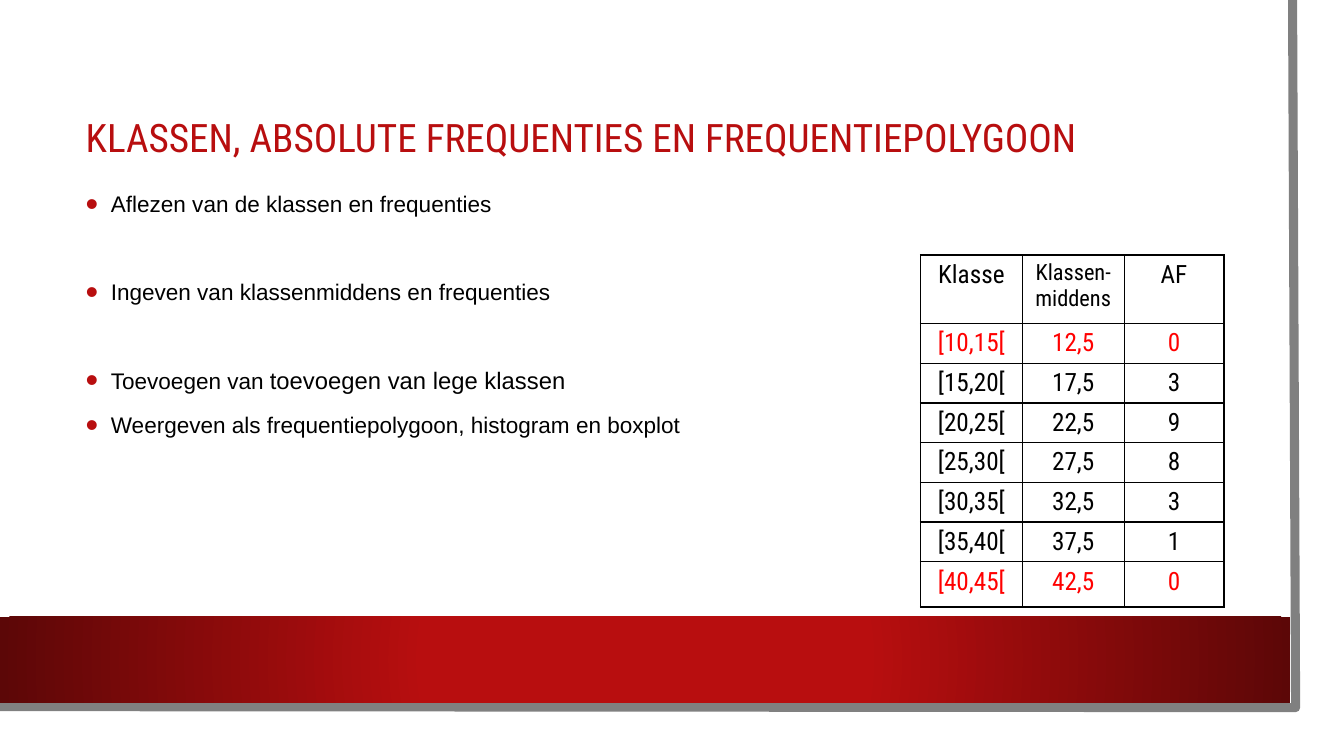
from lxml.etree import SubElement as add_element
from pptx import Presentation
from pptx.dml.color import RGBColor
from pptx.enum.shapes import MSO_SHAPE as Shape
from pptx.enum.text import MSO_ANCHOR as Anchor, PP_ALIGN as Align
from pptx.oxml import parse_xml
from pptx.oxml.ns import nsdecls, qn
from pptx.util import Inches, Pt

COLORS = {"red": "B80E0F", "dark": "5C0707", "gray": "808080",
          "black": "000000", "accent": "FF0000"}
HEADING_FONT, BODY_FONT = "Roboto Condensed", "Arial"

# Each bullet: space before in points, then its (text, size) spans
BULLETS = [
    (0, [("Aflezen van de klassen en frequenties", 16.1)]),
    (41.5, [("Ingeven van klassenmiddens en frequenties", 16.1)]),
    (41.5, [("Toevoegen van ", 16.1), ("toevoegen van lege klassen", 17)]),
    (10, [("Weergeven als frequentiepolygoon, histogram en boxplot", 16.1)]),
]
HEADERS = [("Klasse", 18), ("Klassen-\nmiddens", 16), ("AF", 18)]
FREQUENCIES = [0, 3, 9, 8, 3, 1, 0]
FIRST_CLASS, CLASS_WIDTH = 10, 5


def rgb(name):
    return RGBColor.from_string(COLORS[name])


class SlideBuilder:
    def __init__(self, deck):
        self.page = deck.slides.add_slide(deck.slide_layouts[1])

    def place(self, box, left, top, width, height):
        for name, value in dict(left=left, top=top, width=width, height=height).items():
            setattr(box, name, Inches(value))

    def style_font(self, font, size, color, name):
        for key, value in dict(size=Pt(size), name=name, bold=False).items():
            setattr(font, key, value)
        font.color.rgb = rgb(color)

    def title(self, text, bounds):
        box = self.page.shapes.title
        self.place(box, *bounds)
        box.text_frame.text = text
        box.text_frame.vertical_anchor = Anchor.MIDDLE
        para = box.text_frame.paragraphs[0]
        for name, value in dict(alignment=Align.LEFT, line_spacing=0.9).items():
            setattr(para, name, value)
        self.style_font(para.runs[0].font, 28, "red", HEADING_FONT)

    def bullet_list(self, items, bounds):
        box = self.page.placeholders[1]
        self.place(box, *bounds)
        frame = box.text_frame
        frame.vertical_anchor = Anchor.TOP
        for index, (space, spans) in enumerate(items):
            para = frame.add_paragraph() if index else frame.paragraphs[0]
            self.bullet(para)
            layout = dict(line_spacing=1.1, space_before=Pt(space), space_after=Pt(0))
            for name, value in layout.items():
                setattr(para, name, value)
            for text, size in spans:
                span = para.add_run()
                span.text = text
                self.style_font(span.font, size, "black", BODY_FONT)

    def bullet(self, para):
        props = para._p.get_or_add_pPr()
        props.set("marL", str(Inches(0.25)))
        props.set("indent", str(-Inches(0.25)))
        color = add_element(props, qn("a:buClr"))
        add_element(color, qn("a:srgbClr"), val=COLORS["red"])
        add_element(props, qn("a:buSzPct"), val="160000")
        add_element(props, qn("a:buFont"), typeface=BODY_FONT)
        add_element(props, qn("a:buChar"), char="•")

    def outline(self, points, color, width):
        start, *rest = [(Inches(x), Inches(y)) for x, y in points]
        builder = self.page.shapes.build_freeform(*start)
        builder.add_line_segments(rest, close=False)
        edge = builder.convert_to_shape()
        edge.shadow.inherit = False
        edge.fill.background()
        edge.line.color.rgb = rgb(color)
        edge.line.width = Pt(width)

    def radial_band(self, bounds, stops):
        band = self.page.shapes.add_shape(Shape.RECTANGLE, *map(Inches, bounds))
        band.shadow.inherit = False
        band.line.fill.background()
        stop_xml = "".join(
            f'<a:gs pos="{position * 1000}"><a:srgbClr val="{COLORS[color]}"/></a:gs>'
            for position, color in stops)
        gradient = parse_xml(
            f'<a:gradFill {nsdecls("a")}><a:gsLst>{stop_xml}</a:gsLst><a:path path="circle">'
            '<a:fillToRect l="50000" t="50000" r="50000" b="50000"/></a:path></a:gradFill>')
        band._element.spPr.find(qn("a:prstGeom")).addnext(gradient)

    def table(self, rows, bounds, widths, heights):
        frame = self.page.shapes.add_table(len(rows), len(widths), *map(Inches, bounds))
        grid = frame.table
        grid.first_row = grid.horz_banding = False
        for column, width in zip(grid.columns, widths):
            column.width = Inches(width)
        for row, height, values in zip(grid.rows, heights, rows):
            row.height = Inches(height)
            for cell, (text, size, color) in zip(row.cells, values):
                self.cell(cell, text, size, color)

    def cell(self, cell, text, size, color):
        cell.text = text
        for para in cell.text_frame.paragraphs:
            para.alignment = Align.CENTER
            self.style_font(para.runs[0].font, size, color, HEADING_FONT)
        props = cell._tc.get_or_add_tcPr()
        for side in ("lnL", "lnR", "lnT", "lnB"):
            line = add_element(props, qn(f"a:{side}"), w=str(Pt(1)))
            fill = add_element(line, qn("a:solidFill"))
            add_element(fill, qn("a:srgbClr"), val=COLORS["black"])
        cell.fill.background()


def frequency_rows():
    rows = [[(text, size, "black") for text, size in HEADERS]]
    for index, count in enumerate(FREQUENCIES):
        low = FIRST_CLASS + index * CLASS_WIDTH
        high = low + CLASS_WIDTH
        middle = str((low + high) / 2).replace(".", ",")
        color = "black" if count else "accent"
        rows.append([(text, 18, color) for text in (f"[{low},{high}[", middle, str(count))])
    return rows


def main():
    deck = Presentation()
    deck.slide_width, deck.slide_height = Inches(13.33), Inches(7.5)
    slide = SlideBuilder(deck)

    # Frame edge and red band
    slide.outline([(12.82, 0), (12.85, 7.02), (-0.03, 7.01)], "gray", 6.5)
    slide.radial_band((0, 6.12, 12.8, 0.85), [(34, "red"), (100, "dark")])

    # Title and steps
    slide.title("KLASSEN, ABSOLUTE FREQUENTIES EN FREQUENTIEPOLYGOON",
                (0.75, 0.75, 11.37, 1.27))
    slide.bullet_list(BULLETS, (0.75, 1.81, 6.53, 4.06))

    # Frequency table
    slide.table(frequency_rows(), (9.13, 2.53, 3.01, 3.55),
                (1.01, 1.01, 0.99), [0.68] + [0.39] * 6 + [0.45])

    deck.save("out.pptx")


if __name__ == "__main__":
    main()
